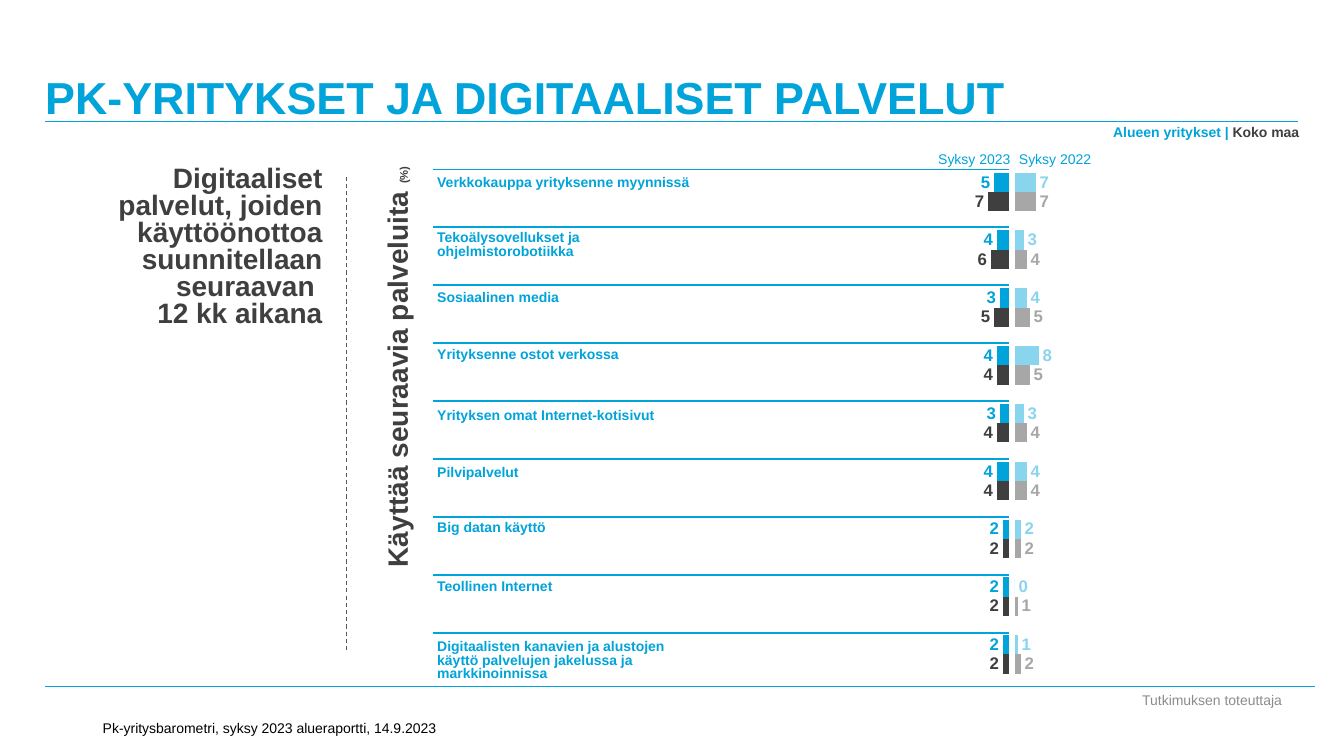
"""Builds the slide on digital services that small businesses plan to adopt."""
from lxml import etree
from pptx import Presentation
from pptx.chart.data import CategoryChartData
from pptx.dml.color import RGBColor
from pptx.enum.chart import XL_CHART_TYPE, XL_LABEL_POSITION
from pptx.enum.dml import MSO_LINE
from pptx.enum.shapes import MSO_CONNECTOR
from pptx.enum.text import MSO_ANCHOR, PP_ALIGN
from pptx.oxml.ns import qn
from pptx.util import Cm, Pt

BLUE = RGBColor(0x00, 0xA3, 0xDA)
LIGHT_BLUE = RGBColor(0x8A, 0xD5, 0xEE)
DARK = RGBColor(0x3F, 0x3F, 0x3F)
GREY = RGBColor(0xA7, 0xA7, 0xA7)
CREDIT_GREY = RGBColor(0x8C, 0x8C, 0x8C)
DASH_GREY = RGBColor(0x59, 0x59, 0x59)
BLACK = RGBColor(0x00, 0x00, 0x00)
LEFT, CENTER, RIGHT = PP_ALIGN.LEFT, PP_ALIGN.CENTER, PP_ALIGN.RIGHT
TOP, MIDDLE, BOTTOM = MSO_ANCHOR.TOP, MSO_ANCHOR.MIDDLE, MSO_ANCHOR.BOTTOM
BARS = XL_CHART_TYPE.BAR_CLUSTERED
OUTSIDE = XL_LABEL_POSITION.OUTSIDE_END
STRAIGHT = MSO_CONNECTOR.STRAIGHT
DASH = MSO_LINE.DASH

deck = Presentation()
deck.slide_width, deck.slide_height = Cm(33.87), Cm(19.05)
page = deck.slides.add_slide(deck.slide_layouts[6])


def add_text(place, spans, align=LEFT, anchor=TOP, spacing=None):
    """Adds a text box; each span is its text, size, colour and weight."""
    box = page.shapes.add_textbox(*[Cm(length) for length in place])
    frame = box.text_frame
    frame.word_wrap, frame.vertical_anchor = True, anchor
    para = frame.paragraphs[0]
    para.alignment, para.line_spacing = align, spacing
    for text, size, colour, bold in spans:
        for index, part in enumerate(text.split("\n")):
            if index:
                para.add_line_break()
            span = para.add_run()
            span.text = part
            look = {"name": "Arial", "size": Pt(size), "bold": bold}
            for key, value in look.items():
                setattr(span.font, key, value)
            span.font.color.rgb = colour
    return box


def add_line(start_x, start_y, end_x, end_y, colour=BLUE, width=0.75):
    """Adds a straight line without a shadow."""
    line = page.shapes.add_connector(
        STRAIGHT, Cm(start_x), Cm(start_y), Cm(end_x), Cm(end_y))
    line.line.color.rgb = colour
    line.line.width = Pt(width)
    etree.SubElement(line.element.spPr, qn("a:effectLst"))
    return line


charts = [
    (17.75, True, [(BLUE, (5, 4, 3, 4, 3, 4, 2, 2, 2)),
                   (DARK, (7, 6, 5, 4, 4, 4, 2, 2, 2))]),
    (25.43, False, [(LIGHT_BLUE, (7, 3, 4, 8, 3, 4, 2, 0, 1)),
                    (GREY, (7, 4, 5, 5, 4, 4, 2, 1, 2))]),
]
plot_area = {"layoutTarget": "inner", "xMode": "edge", "yMode": "edge",
             "x": 0.018, "y": 0.033, "w": 0.948, "h": 0.965}
for left, mirrored, series_list in charts:
    data = CategoryChartData(number_format="#,##0")
    data.categories = [str(number) for number in range(1, 10)]
    for number, (colour, values) in enumerate(series_list, 1):
        data.add_series(f"Series {number}", values)
    chart = page.shapes.add_chart(
        BARS, Cm(left), Cm(3.66), Cm(7.95), Cm(13.59), data).chart
    chart.has_title = chart.has_legend = False
    chart.font.name, chart.font.size = "Arial", Pt(20)
    chart.font.color.rgb = BLACK
    chart.category_axis.reverse_order = True
    chart.value_axis.reverse_order = mirrored
    chart.value_axis.has_major_gridlines = False
    chart.value_axis.minimum_scale, chart.value_axis.maximum_scale = 0, 100
    chart.category_axis.visible = chart.value_axis.visible = False
    plot = chart.plots[0]
    plot.gap_width, plot.overlap, plot.vary_by_categories = 101, 0, False
    for series, (colour, values) in zip(plot.series, series_list):
        series.format.fill.solid()
        series.format.fill.fore_color.rgb = colour
        series.invert_if_negative = False
        labels = series.data_labels
        labels.show_value, labels.position = True, OUTSIDE
        labels.number_format, labels.number_format_is_linked = "#,##0", False
        labels.font.name, labels.font.size = "Arial", Pt(12)
        labels.font.bold = True
        labels.font.color.rgb = colour
    area = chart.element.find(".//" + qn("c:plotArea"))
    for old in area.findall(qn("c:layout")):
        area.remove(old)
    layout = etree.Element(qn("c:layout"))
    manual = etree.SubElement(layout, qn("c:manualLayout"))
    for key, value in plot_area.items():
        etree.SubElement(manual, qn("c:" + key)).set("val", str(value))
    area.insert(0, layout)

title = add_text((1.14, 0, 31.24, 3.1),
                 [("PK-YRITYKSET JA DIGITAALISET PALVELUT", 32, BLUE, True)],
                 anchor=BOTTOM)
for side in ("left", "top", "right", "bottom"):
    setattr(title.text_frame, f"margin_{side}", 0)

add_line(1.14, 3.05, 32.72, 3.05)
add_line(1.14, 17.3, 33.15, 17.3)
divider = add_line(8.74, 4.45, 8.74, 16.43, DASH_GREY)
divider.line.dash_style = DASH

services = [
    (4.34, "Verkkokauppa yrityksenne myynnissä"),
    (5.72, "Tekoälysovellukset ja \nohjelmistorobotiikka"),
    (7.24, "Sosiaalinen media"),
    (8.66, "Yrityksenne ostot verkossa"),
    (10.19, "Yrityksen omat Internet-kotisivut"),
    (11.63, "Pilvipalvelut"),
    (13.03, "Big datan käyttö"),
    (14.5, "Teollinen Internet"),
    (16.03, "Digitaalisten kanavien ja alustojen \n"
            "käyttö palvelujen jakelussa ja markkinoinnissa"),
]
for row, (top, service) in enumerate(services):
    rule_top = 4.27 + 1.46 * row
    add_line(10.92, rule_top, 25.43, rule_top, width=1.25)
    height = 0.61 + 0.33 * service.count("\n")
    add_text((10.77, top, 8.1, height), [(service, 10, BLUE, True)],
             spacing=0.8)

axis_title = add_text((3.84, 9.55, 12.34, 1.12),
                      [("Käyttää seuraavia palveluita ", 20, DARK, True),
                       ("(%)", 8, DARK, True)], RIGHT)
axis_title.rotation = 270
add_text((20.65, 3, 12.34, 0.69),
         [("Alueen yritykset | ", 10, BLUE, True),
          ("Koko maa", 10, DARK, True)], RIGHT)
add_text((1.09, 4.09, 7.29, 4.37),
         [("Digitaaliset palvelut, joiden käyttöönottoa suunnitellaan\n"
           "seuraavan \n12 kk aikana", 20, DARK, True)], RIGHT, spacing=0.8)
add_text((25.43, 3.66, 2.62, 0.69), [("Syksy 2022", 10, BLUE, False)])
add_text((23.09, 3.66, 2.62, 0.69), [("Syksy 2023", 10, BLUE, False)], RIGHT)
add_text((28.35, 17.32, 4.39, 0.66),
         [("Tutkimuksen toteuttaja", 10, CREDIT_GREY, False)], CENTER, MIDDLE)
add_text((2.34, 17.78, 10.59, 0.89),
         [("Pk-yritysbarometri, syksy 2023 alueraportti, 14.9.2023",
           10, BLACK, False)], anchor=BOTTOM)

deck.save("out.pptx")
